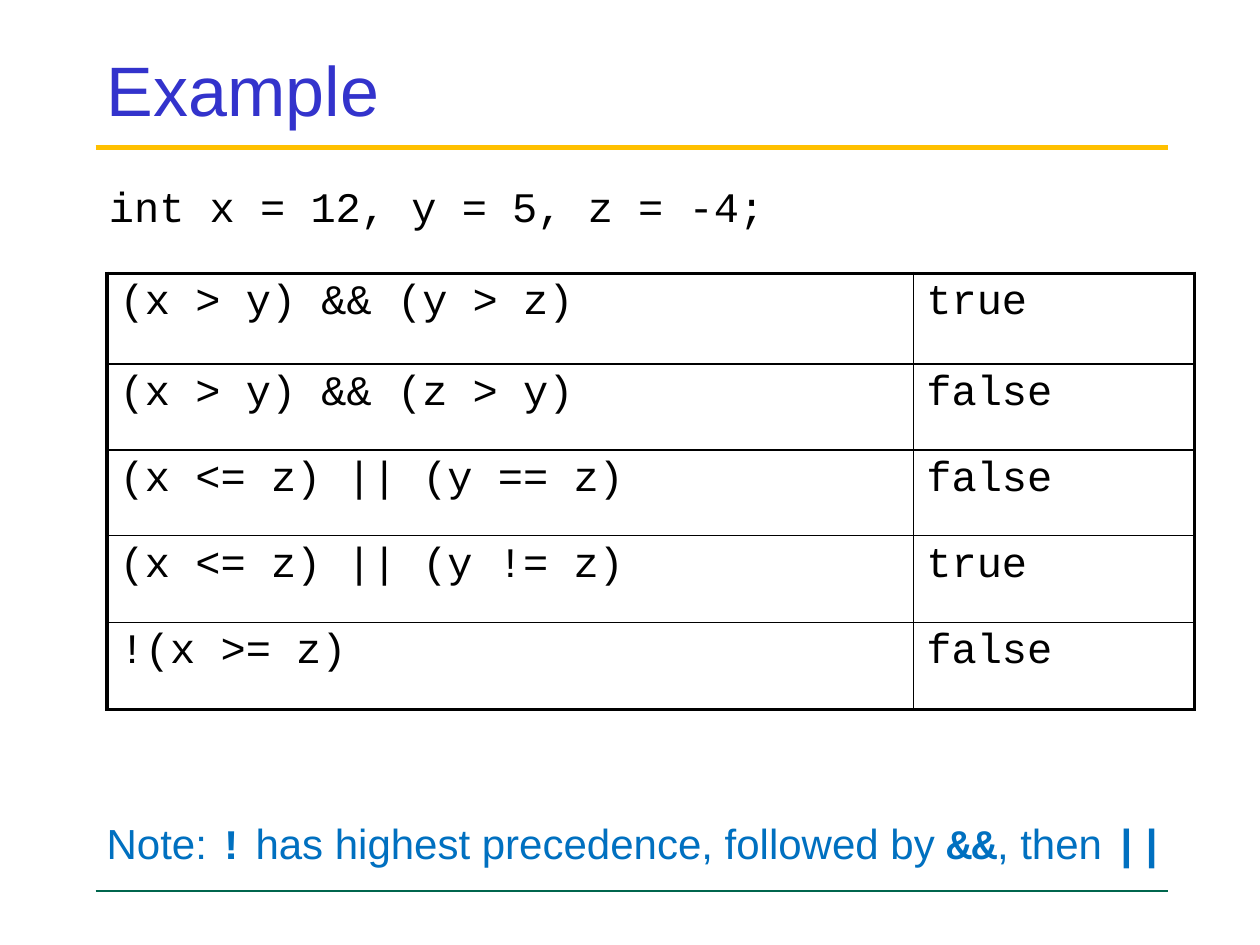
from dataclasses import dataclass

from lxml.etree import SubElement
from pptx import Presentation
from pptx.dml.color import RGBColor
from pptx.enum.shapes import MSO_CONNECTOR
from pptx.enum.text import MSO_ANCHOR, MSO_AUTO_SIZE, PP_ALIGN
from pptx.oxml.ns import qn
from pptx.util import Cm, Pt


@dataclass(frozen=True)
class Theme:
    title: str = "3333CC"
    text: str = "000000"
    note: str = "0070C0"
    title_rule: str = "FFC000"
    footer_rule: str = "00664D"
    sans: str = "Arial"
    mono: str = "Courier New"
    title_size: float = 40
    text_size: float = 24
    thick: float = 2.25
    thin: float = 1


@dataclass(frozen=True)
class Rule:
    top: float
    color: str
    width: float


@dataclass(frozen=True)
class Example:
    expression: str
    result: str
    height: float


THEME = Theme()
RULES = [Rule(2.97, THEME.title_rule, 3), Rule(17.96, THEME.footer_rule, 0.75)]
EXAMPLES = [
    Example("(x > y) && (y > z)", "true", 1.83),
    Example("(x > y) && (z > y)", "false", 1.73),
    Example("(x <= z) || (y == z)", "false", 1.73),
    Example("(x <= z) || (y != z)", "true", 1.75),
    Example("!(x >= z)", "false", 1.75),
]
COLUMN_WIDTHS = (16.26, 5.66)
NOTE = [
    ("Note: ", False),
    ("!", True),
    (" has highest precedence, followed by ", False),
    ("&&", True),
    (", then ", False),
    ("||", True),
]


def add_text(paragraph, text: str, *, font: str = THEME.mono, size: float = THEME.text_size,
             color: str = THEME.text, bold: bool = False) -> None:
    run = paragraph.add_run()
    run.text = text
    run.font.name = font
    run.font.size = Pt(size)
    run.font.bold = bold
    run.font.color.rgb = RGBColor.from_string(color)


def place(shape, left: float, top: float, width: float, height: float) -> None:
    shape.left, shape.top = Cm(left), Cm(top)
    shape.width, shape.height = Cm(width), Cm(height)


def add_rule(slide, rule: Rule) -> None:
    line = slide.shapes.add_connector(
        MSO_CONNECTOR.STRAIGHT, Cm(1.93), Cm(rule.top), Cm(23.55), Cm(rule.top))
    line.line.color.rgb = RGBColor.from_string(rule.color)
    line.line.width = Pt(rule.width)
    SubElement(line._element.spPr, qn("a:effectLst"))


def set_borders(cell, **widths: float) -> None:
    """Draw the cell's L, R, T and B borders, given in that order."""
    properties = cell._tc.get_or_add_tcPr()
    for side, width in widths.items():
        border = SubElement(properties, qn(f"a:ln{side}"), w=str(Pt(width)))
        fill = SubElement(border, qn("a:solidFill"))
        SubElement(fill, qn("a:srgbClr"), val=THEME.text)


def fill_title(title) -> None:
    place(title, 1.9, 0.84, 21.59, 1.9)
    frame = title.text_frame
    frame.auto_size = MSO_AUTO_SIZE.NONE
    frame.vertical_anchor = MSO_ANCHOR.MIDDLE
    paragraph = frame.paragraphs[0]
    paragraph.alignment = PP_ALIGN.LEFT
    add_text(paragraph, "Example", font=THEME.sans, size=THEME.title_size, color=THEME.title)


def fill_declaration(body) -> None:
    place(body, 0.99, 3.71, 20.9, 2.08)
    body.text_frame.auto_size = MSO_AUTO_SIZE.NONE
    paragraph = body.text_frame.paragraphs[0]
    properties = paragraph._p.get_or_add_pPr()
    properties.set("marL", str(Cm(0.95)))
    properties.set("indent", "0")
    SubElement(properties, qn("a:buNone"))
    paragraph.line_spacing = 0.8
    paragraph.space_before = Pt(0)
    add_text(paragraph, "int x = 12, y = 5, z = -4;")


def add_examples(slide) -> None:
    height = sum(example.height for example in EXAMPLES)
    table = slide.shapes.add_table(
        len(EXAMPLES), len(COLUMN_WIDTHS), Cm(2.16), Cm(5.51),
        Cm(sum(COLUMN_WIDTHS)), Cm(height)).table
    table.first_row = table.horz_banding = False
    for column, width in zip(table.columns, COLUMN_WIDTHS):
        column.width = Cm(width)

    def border(is_outer: bool) -> float:
        return THEME.thick if is_outer else THEME.thin

    last_row, last_column = len(EXAMPLES) - 1, len(COLUMN_WIDTHS) - 1
    for row, example in enumerate(EXAMPLES):
        table.rows[row].height = Cm(example.height)
        for column, text in enumerate((example.expression, example.result)):
            cell = table.cell(row, column)
            add_text(cell.text_frame.paragraphs[0], text)
            set_borders(cell, L=border(column == 0), R=border(column == last_column),
                        T=border(row == 0), B=border(row == last_row))
            cell.fill.background()


def add_note(slide) -> None:
    box = slide.shapes.add_textbox(Cm(1.9), Cm(16.36), Cm(22.86), Cm(1.27))
    box.text_frame.word_wrap = True
    for text, is_code in NOTE:
        add_text(box.text_frame.paragraphs[0], text, color=THEME.note, bold=is_code,
                 font=THEME.mono if is_code else THEME.sans)


def main() -> None:
    presentation = Presentation()
    presentation.slide_width, presentation.slide_height = Cm(25.4), Cm(19.05)
    slide = presentation.slides.add_slide(presentation.slide_layouts[1])
    for rule in RULES:
        add_rule(slide, rule)
    fill_title(slide.shapes.title)
    fill_declaration(slide.placeholders[1])
    add_examples(slide)
    add_note(slide)
    presentation.save("out.pptx")


if __name__ == "__main__":
    main()
